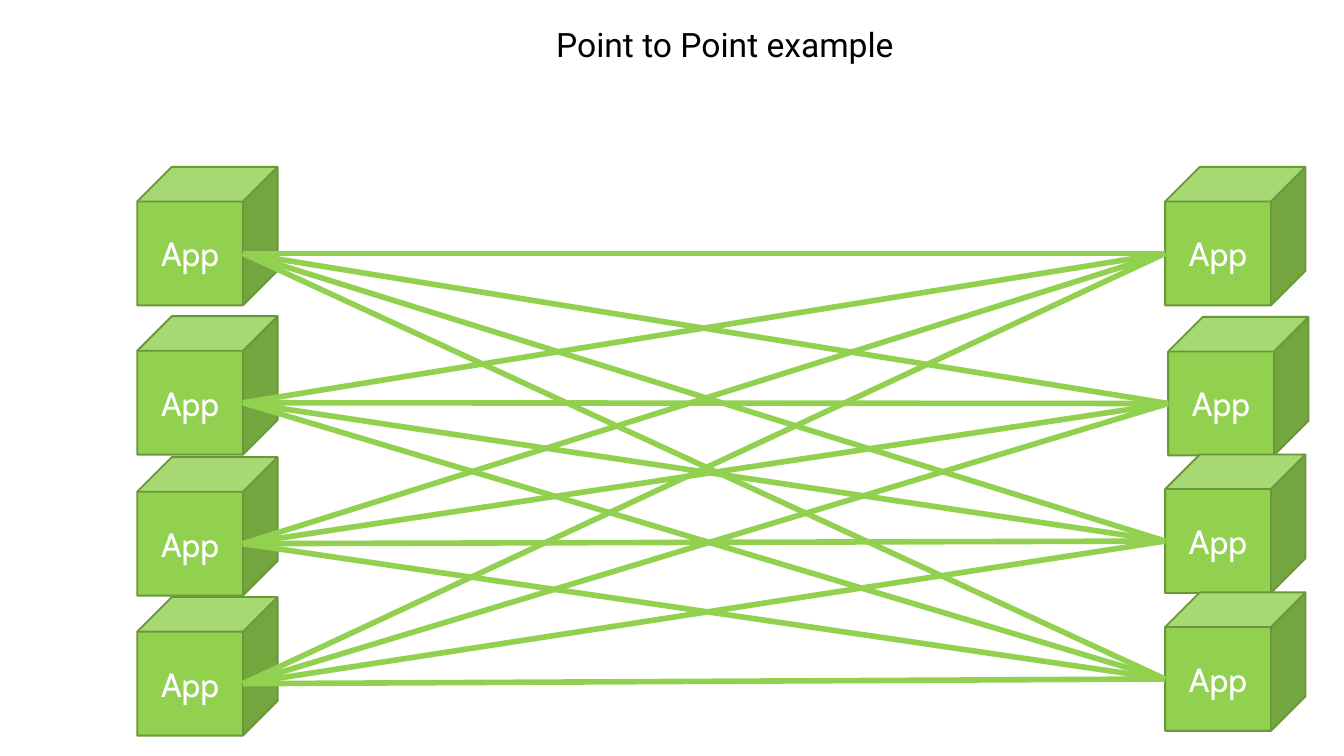
from itertools import product
from lxml.etree import SubElement
from pptx import Presentation
from pptx.dml.color import RGBColor
from pptx.enum.shapes import MSO_CONNECTOR as Link, MSO_SHAPE as Shape
from pptx.enum.text import MSO_ANCHOR as Anchor, MSO_AUTO_SIZE as Fit, PP_ALIGN as Align
from pptx.oxml.ns import qn
from pptx.util import Pt

# Content: left and top of each app cube
TITLE = "Point to Point example"
LABEL = "App"
LEFT = [(73.5, 89.4), (73.5, 169.4), (73.5, 244.9), (73.5, 319.9)]
RIGHT = [(624.2, 89.4), (625.8, 169.8), (624.2, 243.5), (624.2, 317.4)]

WIDE, HIGH = 75.2, 74.2
DEPTH = HIGH / 4
GREEN, EDGE, WHITE, BLACK = "92D050", "6A973A", "FFFFFF", "000000"


def color(code):
    return RGBColor.from_string(code)


def write(frame, text, face, ink):
    para = frame.paragraphs[0]
    para.alignment = Align.CENTER
    run = para.add_run()
    run.text = text
    run.font.name = face
    run.font.size = Pt(18)
    run.font.color.rgb = color(ink)


def add_cube(left, top):
    cube = slide.shapes.add_shape(Shape.CUBE, Pt(left), Pt(top), Pt(WIDE), Pt(HIGH))
    cube.adjustments[0] = 0.25
    cube.shadow.inherit = False
    cube.fill.solid()
    cube.fill.fore_color.rgb = color(GREEN)
    cube.line.color.rgb = color(EDGE)
    cube.line.width = Pt(1)
    cube.text_frame.vertical_anchor = Anchor.MIDDLE
    cube.text_frame.word_wrap = True
    write(cube.text_frame, LABEL, "Cabin", WHITE)


def add_link(start, end):
    # Run from the right side of one front face to the left side of another
    mid = (HIGH + DEPTH) / 2
    link = slide.shapes.add_connector(
        Link.STRAIGHT,
        Pt(start[0] + WIDE - DEPTH), Pt(start[1] + mid),
        Pt(end[0]), Pt(end[1] + mid))
    link.line.color.rgb = color(GREEN)
    link.line.width = Pt(3)
    SubElement(link._element.spPr, qn("a:effectLst"))


deck = Presentation()
deck.slide_width, deck.slide_height = Pt(720), Pt(405)
slide = deck.slides.add_slide(deck.slide_layouts[6])

# Apps
for spot in LEFT + RIGHT:
    add_cube(*spot)

# Every left app talks to every right app
for start, end in product(LEFT, RIGHT):
    add_link(start, end)

# Title
box = slide.shapes.add_textbox(Pt(76.3), Pt(5.8), Pt(624.2), Pt(36))
frame = box.text_frame
frame.word_wrap = True
frame.auto_size = Fit.SHAPE_TO_FIT_TEXT
frame.margin_left = frame.margin_right = Pt(7.2)
frame.margin_top = frame.margin_bottom = Pt(7.2)
write(frame, TITLE, "Roboto", BLACK)

deck.save("out.pptx")
